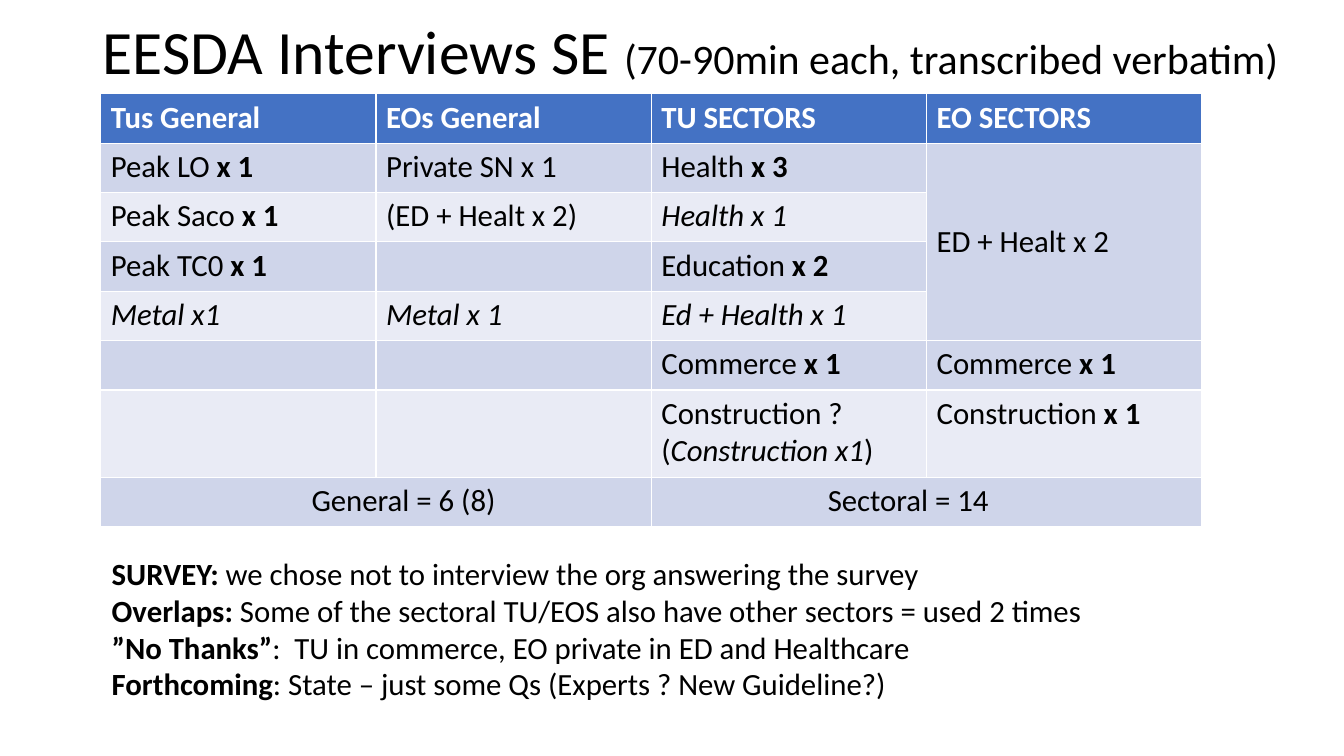
from pptx import Presentation
from pptx.dml.color import RGBColor
from pptx.enum.text import MSO_ANCHOR, MSO_AUTO_SIZE, PP_ALIGN
from pptx.util import Inches, Pt

LEFT, MIDDLE, TOP = PP_ALIGN.LEFT, MSO_ANCHOR.MIDDLE, MSO_ANCHOR.TOP
NO_AUTOFIT = MSO_AUTO_SIZE.NONE

# Content: *bold*, _italic_, one string per paragraph group
TITLE = "EESDA Interviews SE "
SUBTITLE = "(70-90min each, transcribed verbatim)"
ROWS = [
    ["*Tus General*", "*EOs General*", "*TU SECTORS*", "*EO SECTORS*"],
    ["Peak LO *x 1*", "Private SN x 1", "Health *x 3*", "ED + Healt x 2"],
    ["Peak Saco *x 1*", "(ED + Healt x 2)", "_Health x 1_", ""],
    ["Peak TC0* x 1*", "", "Education *x 2*", ""],
    ["_Metal x1_", "_Metal x 1_", "_Ed + Health x 1_", ""],
    ["", "", "Commerce *x 1*", "Commerce *x 1*"],
    ["", "", "Construction ?\n(_Construction x1_)", "Construction *x 1*"],
    ["General = 6 (8)", "", "Sectoral = 14", ""],
]
MERGES = [((1, 3), (4, 3)), ((7, 0), (7, 1)), ((7, 2), (7, 3))]
TOTAL_INDENTS = {(7, 0): 2.09, (7, 2): 1.75}
NOTES = "\n".join([
    "*SURVEY: *we chose not to interview the org answering the survey",
    "*Overlaps: *Some of the sectoral TU/EOS also have other sectors = used 2 times",
    "*”No Thanks”*:  TU in commerce, EO private in ED and Healthcare",
    "*Forthcoming*: State – just some Qs (Experts ? New Guideline?)",
])

# Look and grid, in inches and points
FONT = "Calibri"
BLACK = RGBColor(0x00, 0x00, 0x00)
WHITE = RGBColor(0xFF, 0xFF, 0xFF)
HEADER_BLUE = RGBColor(0x44, 0x72, 0xC4)
BAND_DARK = RGBColor(0xCF, 0xD5, 0xEA)
BAND_LIGHT = RGBColor(0xE9, 0xEB, 0xF5)
BODY_SIZE = 22
COLUMN_WIDTH, ROW_HEIGHT, TALL_ROW_HEIGHT = 2.73, 0.49, 0.87
TALL_ROW = 6


def add_run(paragraph, text, size=BODY_SIZE, color=BLACK, bold=False, italic=False):
    run = paragraph.add_run()
    run.text = text
    run.font.name = FONT
    run.font.size = Pt(size)
    run.font.color.rgb = color
    run.font.bold = bold
    run.font.italic = italic


def write_text(text_frame, text, color=BLACK):
    """Fill a text frame, turning the marks into bold and italic runs."""
    for index, line in enumerate(text.split("\n")):
        paragraph = text_frame.paragraphs[0] if index == 0 else text_frame.add_paragraph()
        paragraph.alignment = LEFT
        for bold_index, part in enumerate(line.split("*")):
            for italic_index, piece in enumerate(part.split("_")):
                if piece:
                    add_run(paragraph, piece, color=color,
                            bold=bold_index % 2 == 1, italic=italic_index % 2 == 1)


def band_color(row):
    if row == 0:
        return HEADER_BLUE
    return BAND_DARK if row % 2 else BAND_LIGHT


presentation = Presentation()
presentation.slide_width = Inches(13.33)
presentation.slide_height = Inches(7.5)
slide = presentation.slides.add_slide(presentation.slide_layouts[5])

# Title
title = slide.shapes.title
title.left, title.top, title.width, title.height = map(Inches, (0.92, -0.18, 12.5, 1.45))
title.text_frame.auto_size = NO_AUTOFIT
title.text_frame.vertical_anchor = MIDDLE
heading = title.text_frame.paragraphs[0]
heading.alignment = LEFT
heading.line_spacing = 0.9
add_run(heading, TITLE, size=44)
add_run(heading, SUBTITLE, size=30)

# Interview table
row_heights = [TALL_ROW_HEIGHT if row == TALL_ROW else ROW_HEIGHT for row in range(len(ROWS))]
column_count = len(ROWS[0])
table = slide.shapes.add_table(
    len(ROWS), column_count, Inches(1), Inches(0.93),
    Inches(COLUMN_WIDTH * column_count), Inches(sum(row_heights))).table
for column in table.columns:
    column.width = Inches(COLUMN_WIDTH)
for row, values in enumerate(ROWS):
    table.rows[row].height = Inches(row_heights[row])
    for column, text in enumerate(values):
        cell = table.cell(row, column)
        cell.fill.solid()
        cell.fill.fore_color.rgb = band_color(row)
        cell.vertical_anchor = TOP
        cell.margin_left = Inches(TOTAL_INDENTS.get((row, column), 0.1))
        write_text(cell.text_frame, text, color=WHITE if row == 0 else BLACK)
for first, last in MERGES:
    table.cell(*first).merge(table.cell(*last))
table.cell(1, 3).vertical_anchor = MIDDLE

# Notes below the table
notes = slide.shapes.add_textbox(*map(Inches, (1.01, 5.45, 10.13, 1.58)))
notes.text_frame.word_wrap = True
write_text(notes.text_frame, NOTES)

presentation.save("out.pptx")
